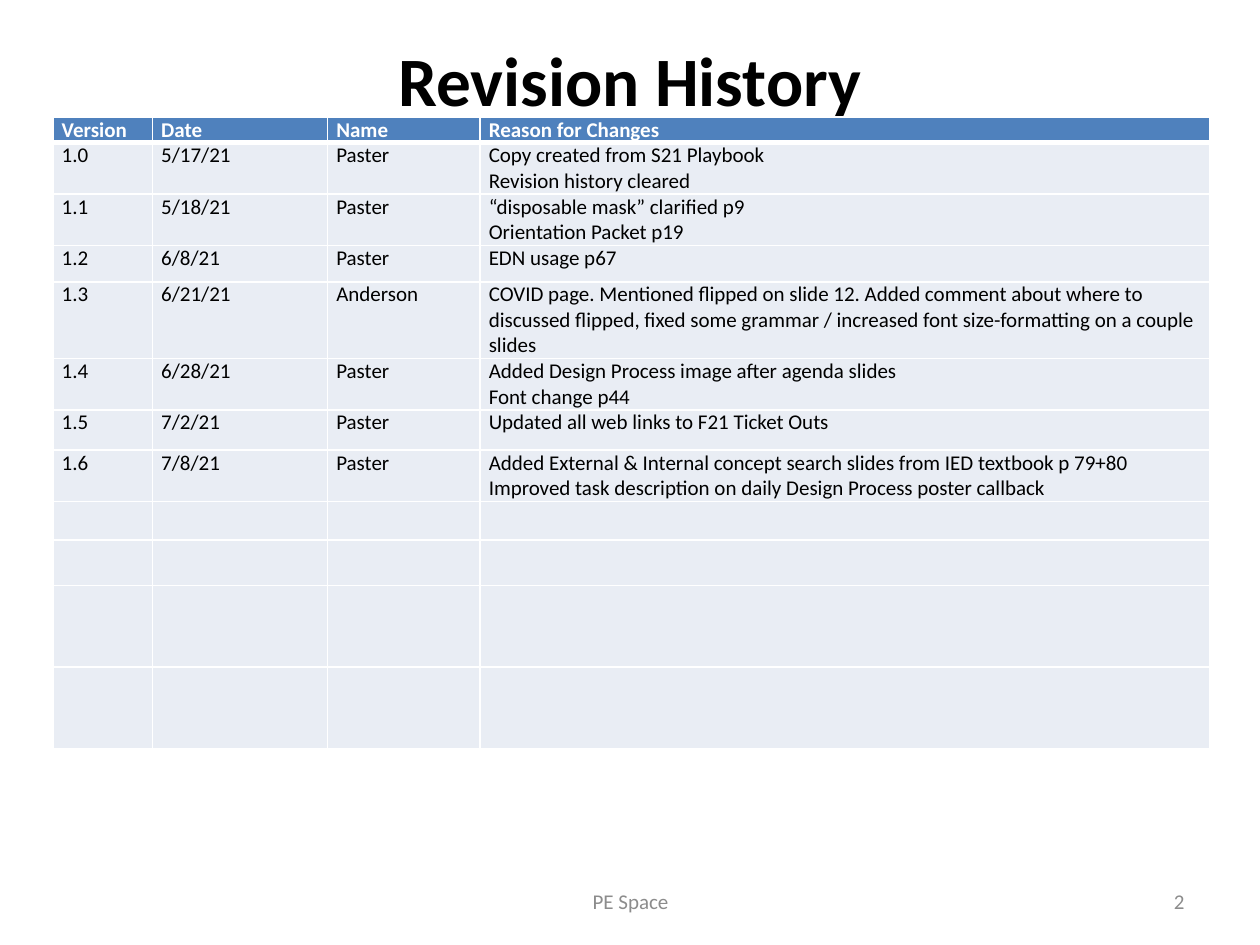
from lxml.etree import SubElement
from pptx import Presentation
from pptx.dml.color import RGBColor as RGB
from pptx.enum.text import MSO_ANCHOR as ANCHOR, MSO_AUTO_SIZE as FIT, PP_ALIGN as ALIGN
from pptx.oxml.ns import qn
from pptx.util import Inches, Pt

COLORS = {"title": "000000", "header": "4F81BD", "header_text": "FFFFFF", "body": "E9EDF4",
          "body_text": "000000", "border": "FFFFFF", "footer": "8C8C8C"}
FONT = "Calibri"
COLS = [0.79, 1.39, 1.21, 5.79]
ROWS = [0.15, 0.29, 0.15, 0.29, 0.32, 0.1, 0.32, 0.3, 0.3, 0.36, 0.65, 0.65]
HISTORY = [
    ("Version", "Date", "Name", ["Reason for Changes"]),
    ("1.0", "5/17/21", "Paster", ["Copy created from S21 Playbook", "Revision history cleared"]),
    ("1.1", "5/18/21", "Paster", ["“disposable mask” clarified p9", "Orientation Packet p19"]),
    ("1.2", "6/8/21", "Paster", ["EDN usage p67"]),
    ("1.3", "6/21/21", "Anderson",
     ["COVID page. Mentioned flipped on slide 12. Added comment about where to discussed "
      "flipped, fixed some grammar / increased font size-formatting on a couple slides"]),
    ("1.4", "6/28/21", "Paster",
     ["Added Design Process image after agenda slides", "Font change p44"]),
    ("1.5", "7/2/21", "Paster", ["Updated all web links to F21 Ticket Outs"]),
    ("1.6", "7/8/21", "Paster",
     ["Added External & Internal concept search slides from IED textbook p 79+80",
      "Improved task description on daily Design Process poster callback"]),
]


def add_run(p, text, size, color, bold=False):
    r = p.add_run()
    r.text = text
    r.font.name, r.font.size, r.font.bold = FONT, Pt(size), bold
    r.font.color.rgb = RGB.from_string(COLORS[color])


def add_border(cell, side, width):
    """Draw one side (L, R, T or B) of a cell."""
    ln = SubElement(cell._tc.get_or_add_tcPr(), qn(f"a:ln{side}"), w=str(Pt(width)))
    fill = SubElement(ln, qn("a:solidFill"))
    SubElement(fill, qn("a:srgbClr"), val=COLORS["border"])


prs = Presentation()
prs.slide_width, prs.slide_height = Inches(10), Inches(7.5)
s = prs.slides.add_slide(prs.slide_layouts[5])

# Title, raised by a closing line break
title = s.shapes.title
title.left, title.top = Inches(0.5), Inches(0.3)
title.width, title.height = Inches(9), Inches(1.25)
tf = title.text_frame
tf.auto_size, tf.vertical_anchor = FIT.NONE, ANCHOR.MIDDLE
p = tf.paragraphs[0]
p.alignment = ALIGN.CENTER
add_run(p, "Revision History", 39.6, "title", True)
p.add_line_break()
SubElement(p._p, qn("a:endParaRPr"), sz="3600")

# Revision table
frame = s.shapes.add_table(len(ROWS), len(COLS), Inches(0.42), Inches(0.93),
                           Inches(sum(COLS)), Inches(4.96))
table = frame.table
for column, width in zip(table.columns, COLS):
    column.width = Inches(width)
for row, height in zip(table.rows, ROWS):
    row.height = Inches(height)
frame.height = Inches(4.96)

for i, row in enumerate(table.rows):
    kind = "header" if i == 0 else "body"
    for cell in row.cells:
        cell.margin_left = cell.margin_right = Inches(0.07)
        cell.margin_top = cell.margin_bottom = 0
        for side in "LRTB":
            under_header = (i, side) in [(0, "B"), (1, "T")]
            add_border(cell, side, 3 if under_header else 1)
        cell.fill.solid()
        cell.fill.fore_color.rgb = RGB.from_string(COLORS[kind])
    if i < len(HISTORY):
        version, date, name, reasons = HISTORY[i]
        for cell, lines in zip(row.cells, [[version], [date], [name], reasons]):
            tf = cell.text_frame
            for n, line in enumerate(lines):
                p = tf.add_paragraph() if n else tf.paragraphs[0]
                add_run(p, line, 12, f"{kind}_text", kind == "header")

# Footer and page number
for text, left, width, align in [("PE Space", 3.42, 3.17, ALIGN.CENTER),
                                 ("2", 7.17, 2.33, ALIGN.RIGHT)]:
    sp = s.shapes.add_textbox(Inches(left), Inches(6.95), Inches(width), Inches(0.4))
    tf = sp.text_frame
    tf.word_wrap, tf.vertical_anchor = True, ANCHOR.MIDDLE
    tf.paragraphs[0].alignment = align
    add_run(tf.paragraphs[0], text, 12, "footer")

prs.save("out.pptx")
